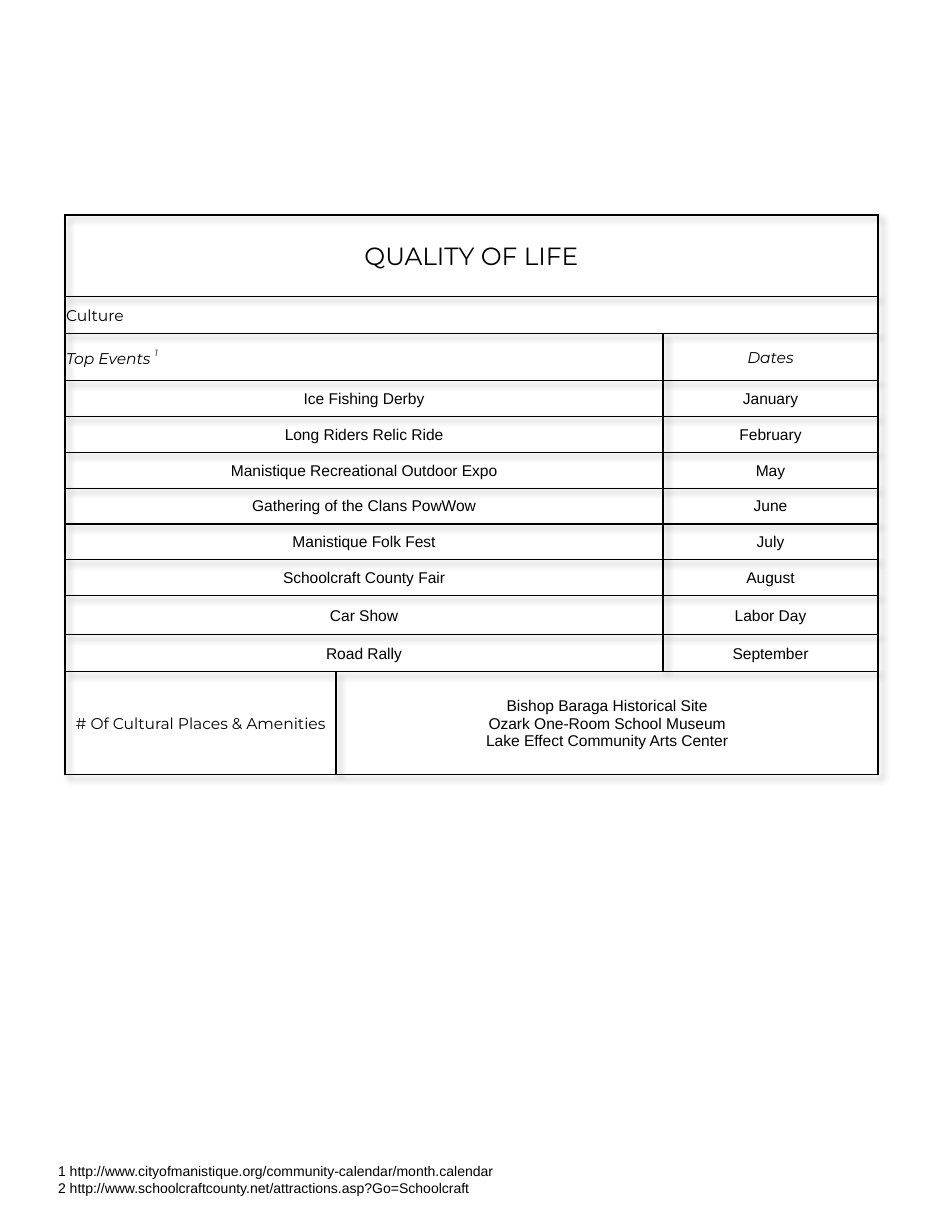
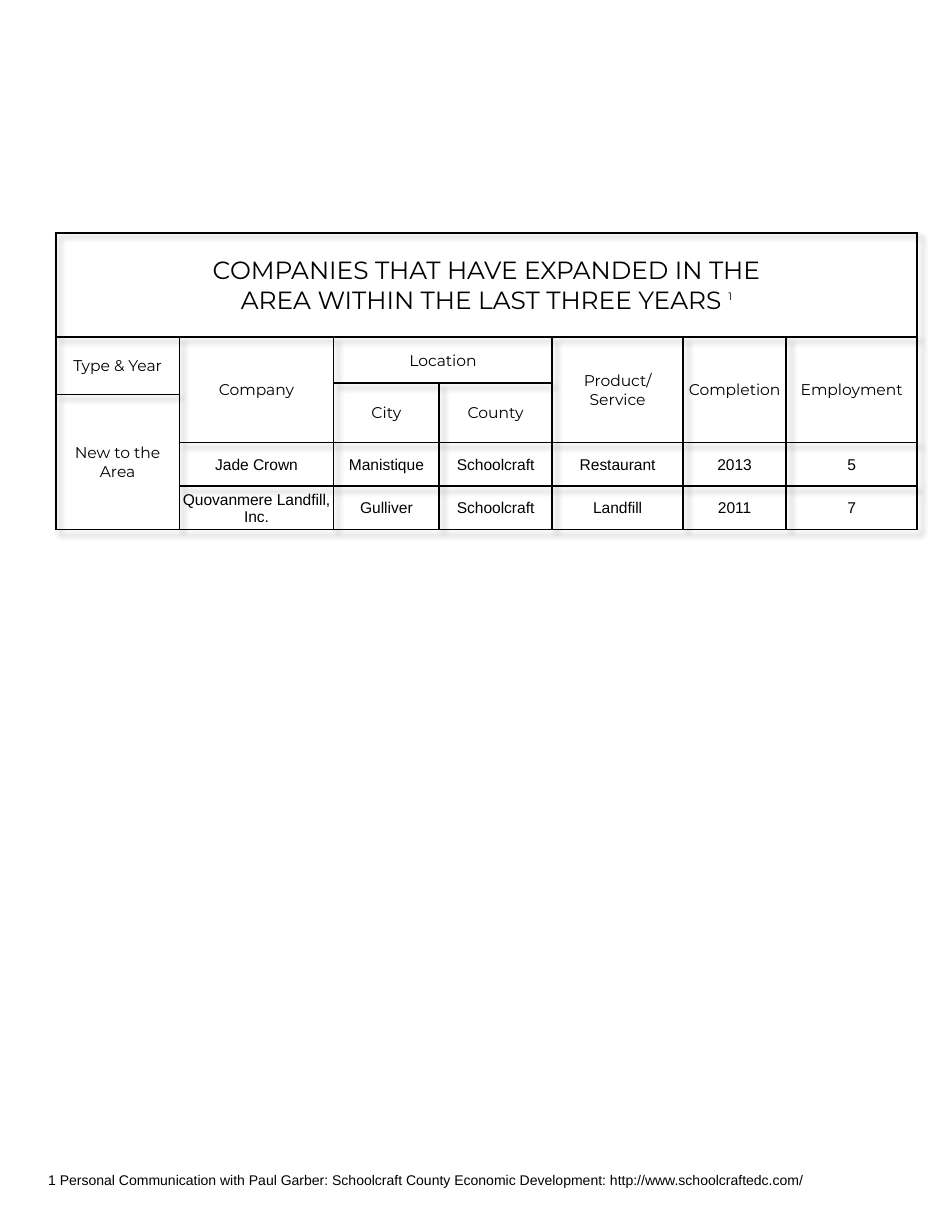
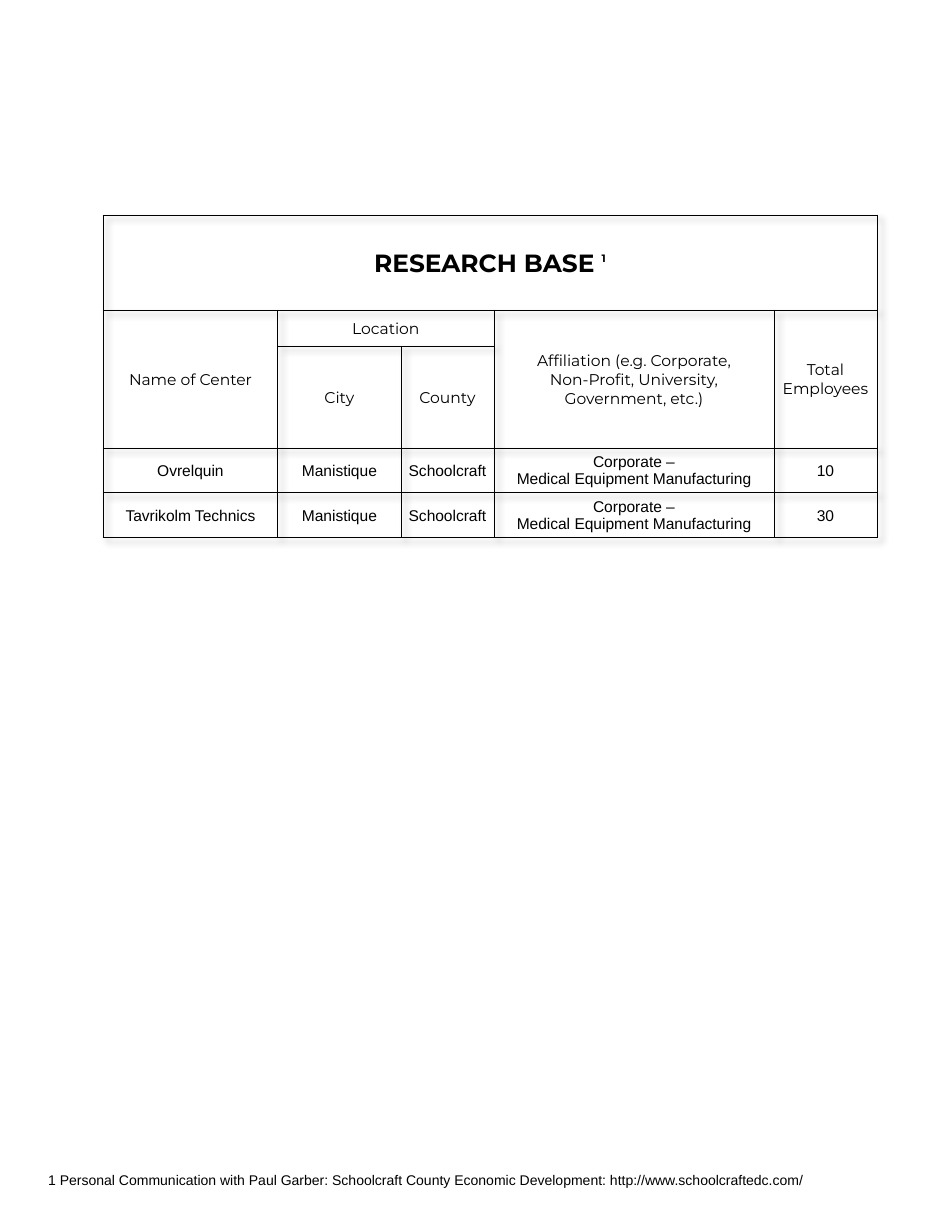
"""Build three community profile tables with footnotes."""
from dataclasses import dataclass, replace

from lxml import etree
from pptx import Presentation
from pptx import util as u
from pptx.dml.color import RGBColor
from pptx.enum import text
from pptx.oxml import ns

BLACK = RGBColor(0x00, 0x00, 0x00)
PLAIN_GRID = "{2D5ABB26-0587-4C30-8999-92F81FD0307C}"
CELL_INSET = u.Inches(0.01)
MARK = "^"
SOURCE = ("1 Personal Communication with Paul Garber: Schoolcraft County "
          "Economic Development: http://www.schoolcraftedc.com/")


@dataclass(frozen=True)
class Style:
    """Look of the text in one cell."""
    font: str = "Arial"
    size: int = 10
    bold: bool = False
    italic: bool = False
    align: text.PP_ALIGN = text.PP_ALIGN.CENTER


VALUE = Style()
HEAD = Style("Montserrat")
TITLE = replace(HEAD, size=16)
BOLD_TITLE = replace(TITLE, bold=True)
SECTION = replace(HEAD, align=text.PP_ALIGN.LEFT)
SUBHEAD = replace(HEAD, italic=True)
LEFT_SUBHEAD = replace(SECTION, italic=True)
NOTE = Style(size=9, align=text.PP_ALIGN.LEFT)


def format_run(run, style):
    """Apply a style to one run."""
    font = run.font
    font.name, font.size = style.font, u.Pt(style.size)
    font.bold, font.italic = style.bold, style.italic
    font.color.rgb = BLACK


def write(frame, words, style):
    """Write lines into a frame; what follows MARK is raised."""
    frame.text = words
    for paragraph, line in zip(frame.paragraphs, words.split("\n")):
        paragraph.alignment = style.align
        main, _, note = line.partition(MARK)
        paragraph.text = main
        format_run(paragraph.runs[0], style)
        if note:
            raised = paragraph.add_run()
            raised.text = note
            format_run(raised, replace(style, size=min(style.size, 12)))
            raised.font._element.set("baseline", "50000")


def draw_borders(cell, weight):
    """Draw black lines on the four sides of a cell."""
    properties = cell._tc.get_or_add_tcPr()
    for side in ("a:lnL", "a:lnR", "a:lnT", "a:lnB"):
        line = etree.SubElement(properties, ns.qn(side), w=str(u.Pt(weight)))
        fill = etree.SubElement(line, ns.qn("a:solidFill"))
        etree.SubElement(fill, ns.qn("a:srgbClr"), val=str(BLACK))


def add_shadow(table):
    """Give the table lines a soft shadow down to the right."""
    effects = etree.Element(ns.qn("a:effectLst"))
    shadow = etree.SubElement(effects, ns.qn("a:outerShdw"), blurRad="50800",
                              dist="50800", dir="2700000", algn="tl")
    colour = etree.SubElement(shadow, ns.qn("a:srgbClr"), val=str(BLACK))
    etree.SubElement(colour, ns.qn("a:alpha"), val="40000")
    table._tbl.tblPr.insert(0, effects)


def add_plain_table(slide, left, top, columns, rows):
    """Add an unstyled table with the given column and row sizes in inches."""
    table = slide.shapes.add_table(
        len(rows), len(columns), u.Inches(left), u.Inches(top),
        u.Inches(sum(columns)), u.Inches(sum(rows))).table
    table.first_row = table.horz_banding = False
    table._tbl.tblPr.find(ns.qn("a:tableStyleId")).text = PLAIN_GRID
    for column, width in zip(table.columns, columns):
        column.width = u.Inches(width)
    for row, height in zip(table.rows, rows):
        row.height = u.Inches(height)
    for cell in table.iter_cells():
        cell.fill.background()
    return table


def add_ruled_table(slide, left, top, columns, rows, entries, weight=1):
    """Add a ruled table from (row, column, row span, column span, words, style)."""
    table = add_plain_table(slide, left, top, columns, rows)
    add_shadow(table)
    for cell in table.iter_cells():
        cell.margin_left = cell.margin_right = cell.margin_top = CELL_INSET
        cell.margin_bottom = 0
        cell.vertical_anchor = text.MSO_ANCHOR.MIDDLE
        properties = cell._tc.get_or_add_tcPr()
        fill = properties.find(ns.qn("a:noFill"))
        draw_borders(cell, weight)
        properties.append(fill)
    for row, column, down, across, words, style in entries:
        cell = table.cell(row, column)
        if down > 1 or across > 1:
            cell.merge(table.cell(row + down - 1, column + across - 1))
        write(cell.text_frame, words, style)


def value_entries(first_row, first_column, records):
    """Place records as single cells, one record a row."""
    return [(first_row + i, first_column + j, 1, 1, words, VALUE)
            for i, record in enumerate(records)
            for j, words in enumerate(record)]


def add_source_table(slide):
    """Add the source line at the foot of a slide."""
    table = add_plain_table(slide, 0.33, 10.42, [7.5], [0.42])
    write(table.cell(0, 0).text_frame, SOURCE, NOTE)


def add_web_notes(slide):
    """Add the two web references at the foot of the events slide."""
    box = slide.shapes.add_textbox(u.Inches(0.42), u.Inches(10.33),
                                   u.Inches(6.92), u.Inches(0.4))
    box.text_frame.word_wrap = True
    write(box.text_frame,
          "1 http://www.cityofmanistique.org/community-calendar/month.calendar\n"
          "2 http://www.schoolcraftcounty.net/attractions.asp?Go=Schoolcraft",
          NOTE)


def build_quality_of_life(slide):
    """Show the yearly events and the cultural places."""
    events = [("Ice Fishing Derby", "January"),
              ("Long Riders Relic Ride", "February"),
              ("Manistique Recreational Outdoor Expo", "May"),
              ("Gathering of the Clans PowWow", "June"),
              ("Manistique Folk Fest", "July"),
              ("Schoolcraft County Fair", "August"),
              ("Car Show", "Labor Day"),
              ("Road Rally", "September")]
    entries = [(0, 0, 1, 3, "QUALITY OF LIFE", TITLE),
               (1, 0, 1, 3, "Culture", SECTION),
               (2, 0, 1, 2, "Top Events ^1", LEFT_SUBHEAD),
               (2, 2, 1, 1, "Dates", SUBHEAD)]
    for row, (event, date) in enumerate(events, start=3):
        entries += [(row, 0, 1, 2, event, VALUE), (row, 2, 1, 1, date, VALUE)]
    entries += [(11, 0, 1, 1, "# Of Cultural Places & Amenities", HEAD),
                (11, 1, 1, 2, "Bishop Baraga Historical Site\n"
                 "Ozark One-Room School Museum\n"
                 "Lake Effect Community Arts Center", VALUE)]
    add_ruled_table(slide, 0.58, 1.92, [2.42, 2.92, 1.92],
                    [0.73, 0.33, 0.42] + [0.32] * 6 + [0.35, 0.33, 0.92],
                    entries)
    add_web_notes(slide)


def build_expanded_companies(slide):
    """Show the companies that are new to the area."""
    companies = [("Jade Crown", "Manistique", "Schoolcraft", "Restaurant",
                  "2013", "5"),
                 ("Quovanmere Landfill, Inc.", "Gulliver", "Schoolcraft",
                  "Landfill", "2011", "7")]
    entries = [(0, 0, 1, 7, "COMPANIES THAT HAVE EXPANDED IN THE\n"
                "AREA WITHIN THE LAST THREE YEARS ^1", TITLE),
               (1, 0, 2, 1, "Type & Year", HEAD),
               (1, 1, 3, 1, "Company", HEAD),
               (1, 2, 1, 2, "Location", HEAD),
               (1, 4, 3, 1, "Product/\nService", HEAD),
               (1, 5, 3, 1, "Completion", HEAD),
               (1, 6, 3, 1, "Employment", HEAD),
               (2, 2, 2, 1, "City", HEAD),
               (2, 3, 2, 1, "County", HEAD),
               (3, 0, 3, 1, "New to the Area", HEAD)]
    add_ruled_table(slide, 0.5, 2.08, [1.1, 1.38, 0.94, 1.01, 1.17, 0.92, 1.17],
                    [0.93, 0.41, 0.1, 0.43, 0.39, 0.39],
                    entries + value_entries(4, 1, companies))
    add_source_table(slide)


def build_research_base(slide):
    """Show the research centers of the area."""
    affiliation = "Corporate –\nMedical Equipment Manufacturing"
    centers = [("Ovrelquin", "Manistique", "Schoolcraft", affiliation, "10"),
               ("Tavrikolm Technics", "Manistique", "Schoolcraft", affiliation,
                "30")]
    entries = [(0, 0, 1, 5, "RESEARCH BASE ^1", BOLD_TITLE),
               (1, 0, 2, 1, "Name of Center", HEAD),
               (1, 1, 1, 2, "Location", HEAD),
               (1, 3, 2, 1, "Affiliation (e.g. Corporate,\n"
                "Non-Profit, University,\nGovernment, etc.)", HEAD),
               (1, 4, 2, 1, "Total Employees", HEAD),
               (2, 1, 1, 1, "City", HEAD),
               (2, 2, 1, 1, "County", HEAD)]
    add_ruled_table(slide, 0.92, 1.92, [1.56, 1.1, 0.83, 2.5, 0.92],
                    [0.85, 0.32, 0.91, 0.4, 0.4],
                    entries + value_entries(3, 0, centers), weight=0.5)
    add_source_table(slide)


def main():
    """Build the slides and save the file."""
    deck = Presentation()
    deck.slide_width, deck.slide_height = u.Inches(8.5), u.Inches(11)
    blank = deck.slide_layouts[6]
    for build in (build_quality_of_life, build_expanded_companies,
                  build_research_base):
        build(deck.slides.add_slide(blank))
    deck.save("out.pptx")


if __name__ == "__main__":
    main()
